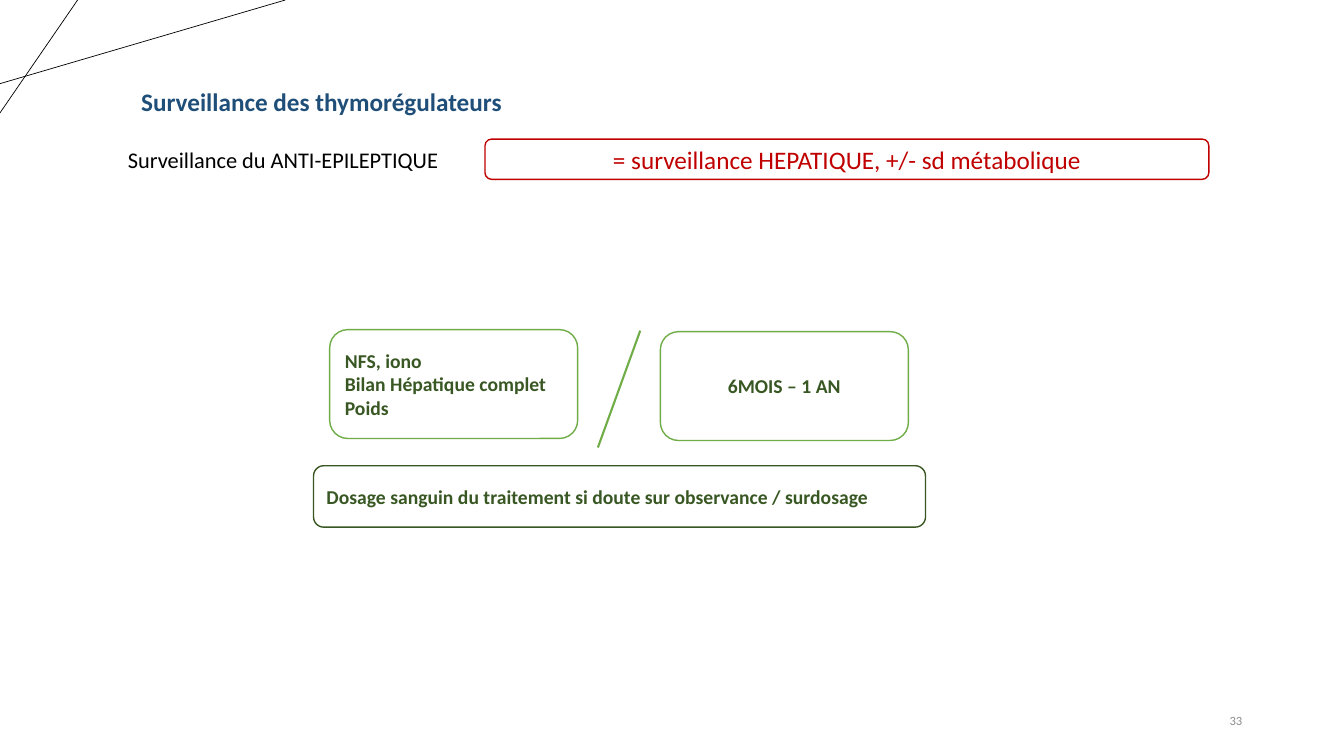
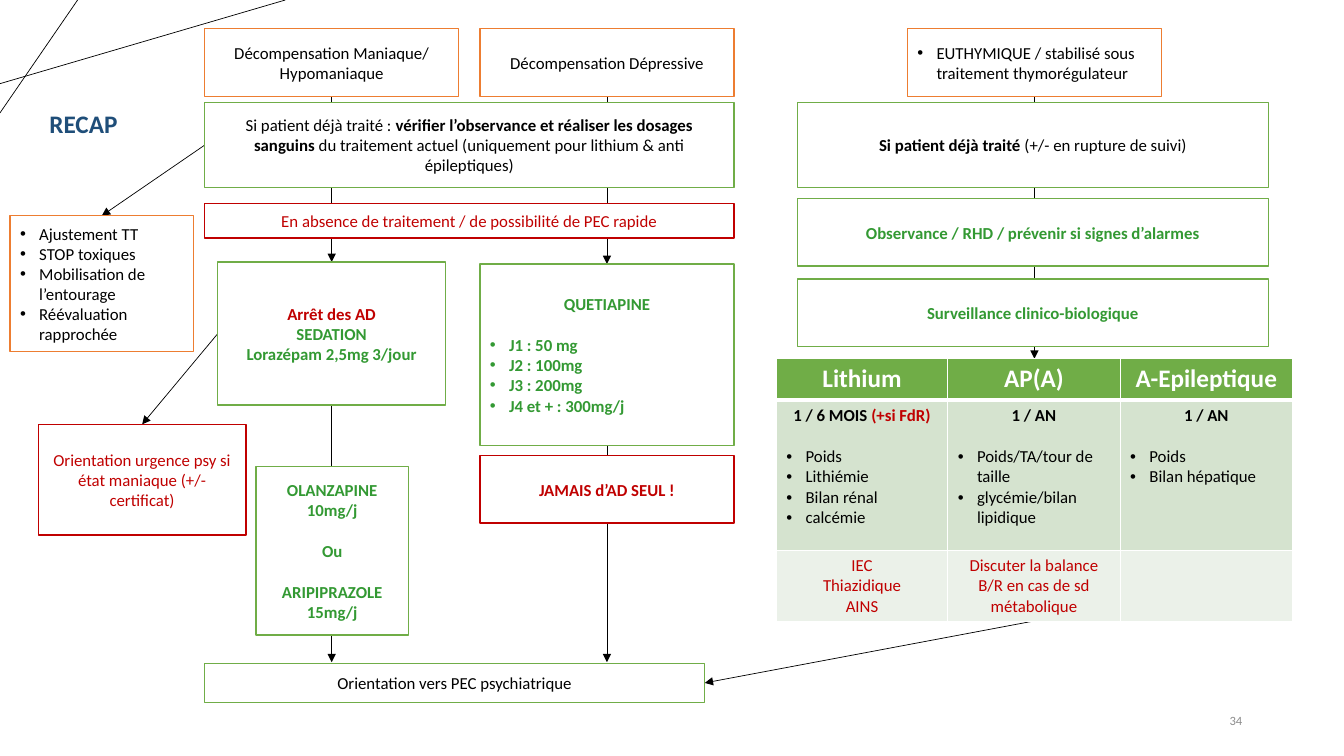
"""Build two slides on mood stabiliser monitoring: the anti-epileptic follow-up and the recap flowchart."""
import pptx
import pptx.dml.color
import pptx.enum.shapes
import pptx.enum.text
import pptx.oxml
import pptx.oxml.ns
import pptx.util

PX = 9144
FONT = "Calibri"
LINE_GAP = 14.6
COLORS = {
    "black": "000000",
    "white": "FFFFFF",
    "navy": "1F4E79",
    "red": "C00000",
    "orange": "ED7D31",
    "green": "70AD47",
    "leaf": "339933",
    "forest": "385723",
    "gray": "8C8C8C",
    "band": "D5E3CF",
    "pale": "EBF1E9",
}
RGB = {name: pptx.dml.color.RGBColor.from_string(value) for name, value in COLORS.items()}
ALIGN = {
    "left": pptx.enum.text.PP_ALIGN.LEFT,
    "center": pptx.enum.text.PP_ALIGN.CENTER,
    "right": pptx.enum.text.PP_ALIGN.RIGHT,
    "bullet": pptx.enum.text.PP_ALIGN.LEFT,
}
ANCHOR = pptx.enum.text.MSO_ANCHOR
SHAPE = pptx.enum.shapes.MSO_SHAPE
NAMESPACE = pptx.oxml.ns.nsdecls("a")


def write(frame, paragraphs, size, anchor):
    """Fill a text frame with (kind, space before, runs) paragraphs."""
    frame.word_wrap = True
    frame.vertical_anchor = anchor
    for index, (kind, gap, runs) in enumerate(paragraphs):
        para = frame.add_paragraph() if index else frame.paragraphs[0]
        if kind == "bullet":
            properties = para._p.get_or_add_pPr()
            properties.set("marL", str(19 * PX))
            properties.set("indent", str(-19 * PX))
            for tag in ('buFont {} typeface="Arial"', 'buChar {} char="•"'):
                properties.append(pptx.oxml.parse_xml(f"<a:{tag.format(NAMESPACE)}/>"))
        para.alignment = ALIGN[kind]
        para.space_before = pptx.util.Pt(gap)
        for text, color, bold in runs:
            span = para.add_run()
            span.text = text
            span.font.name = FONT
            span.font.size = pptx.util.Pt(size)
            span.font.bold = bold
            span.font.color.rgb = RGB[color]


def draw_line(page, start, end, color, width):
    """Draw a straight line without a shadow."""
    points = [value * PX for value in (*start, *end)]
    line = page.shapes.add_connector(pptx.enum.shapes.MSO_CONNECTOR.STRAIGHT, *points)
    line.line.color.rgb = RGB[color]
    line.line.width = pptx.util.Pt(width)
    line.element.spPr.append(pptx.oxml.parse_xml(f"<a:effectLst {NAMESPACE}/>"))
    return line


deck = pptx.Presentation()
deck.slide_width = 1333 * PX
deck.slide_height = 750 * PX
layout = deck.slide_layouts[5]

monitoring_boxes = {
    "liver": (481, 138, 718, 40, "red", 18, [
        ("center", 0, [("= surveillance HEPATIQUE, +/- sd métabolique", "red", False)]),
    ]),
    "tests": (327, 327, 246, 108, "green", 14, [
        ("left", 0, [(text, "forest", True)])
        for text in ("NFS, iono", "Bilan Hépatique complet", "Poids")
    ]),
    "dosage": (311, 462, 607, 61, "forest", 14, [
        ("left", 0, [("Dosage sanguin du traitement si doute sur observance / surdosage", "forest", True)]),
    ]),
    "interval": (655, 329, 246, 108, "green", 14, [
        ("center", 0, [("6MOIS – 1 AN", "forest", True)]),
    ]),
}

recap_boxes = {
    "manic": (203, 28, 252, 68, "orange", 12, [
        ("center", 0, [("Décompensation Maniaque/ Hypomaniaque", "black", False)]),
    ]),
    "depressive": (476, 28, 252, 68, "orange", 12, [
        ("center", 0, [("Décompensation Dépressive", "black", False)]),
    ]),
    "euthymic": (900, 28, 252, 68, "orange", 12, [
        ("bullet", 0, [("EUTHYMIQUE / stabilisé sous traitement thymorégulateur", "black", False)]),
    ]),
    "adherence": (203, 102, 525, 84, "green", 12, [
        ("center", 0, [
            ("Si patient déjà traité : ", "black", False),
            ("vérifier l’observance et réaliser les dosages sanguins ", "black", True),
            ("du traitement actuel (uniquement pour lithium & anti épileptiques)", "black", False),
        ]),
    ]),
    "untreated": (203, 202, 525, 34, "red", 12, [
        ("center", 0, [("En absence de traitement / de possibilité de PEC rapide", "red", False)]),
    ]),
    "adjust": (10, 214, 182, 135, "orange", 12, [
        ("bullet", 0, [(text, "black", False)])
        for text in ("Ajustement TT", "STOP toxiques", "Mobilisation de l’entourage", "Réévaluation rapprochée")
    ]),
    "sedation": (216, 260, 226, 142, "green", 12, [
        ("center", 0, [("Arrêt des AD", "red", True)]),
        ("center", 0, [("SEDATION", "leaf", True)]),
        ("center", 0, [("Lorazépam 2,5mg 3/jour", "leaf", True)]),
    ]),
    "quetiapine": (476, 262, 252, 180, "green", 12, [
        ("center", 0, [("QUETIAPINE", "leaf", True)]),
        *[
            ("bullet", 0 if index else LINE_GAP, [(text, "leaf", True)])
            for index, text in enumerate(("J1 : 50 mg", "J2 : 100mg", "J3 : 200mg", "J4 et + : 300mg/j"))
        ],
    ]),
    "emergency": (38, 421, 206, 110, "red", 12, [
        ("center", 0, [("Orientation urgence psy si état maniaque (+/- certificat)", "red", False)]),
    ]),
    "antipsychotic": (254, 463, 151, 167, "green", 12, [
        ("center", gap, [(text, "leaf", True)])
        for text, gap in (
            ("OLANZAPINE", 0), ("10mg/j", 0), ("Ou", LINE_GAP), ("ARIPIPRAZOLE", LINE_GAP), ("15mg/j", 0),
        )
    ]),
    "never": (476, 452, 252, 67, "red", 12, [
        ("center", 0, [("JAMAIS d’AD SEUL !", "red", True)]),
    ]),
    "referral": (203, 658, 496, 39, "green", 12, [
        ("center", 0, [("Orientation vers PEC psychiatrique", "black", False)]),
    ]),
    "treated": (791, 102, 467, 84, "green", 12, [
        ("center", 0, [
            ("Si patient déjà traité ", "black", True),
            ("(+/- en rupture de suivi)", "black", False),
        ]),
    ]),
    "hygiene": (791, 197, 467, 67, "green", 12, [
        ("center", 0, [("Observance / RHD / prévenir si signes d’alarmes", "leaf", True)]),
    ]),
    "follow_up": (791, 277, 467, 67, "green", 12, [
        ("center", 0, [("Surveillance clinico-biologique", "leaf", True)]),
    ]),
}

pages = []
shapes = {}
for number, heading, heading_area, outline, boxes in (
    (33, "Surveillance des thymorégulateurs", (130, 81, 797, 40), SHAPE.ROUNDED_RECTANGLE, monitoring_boxes),
    (34, "RECAP", (39, 102, 114, 40), SHAPE.RECTANGLE, recap_boxes),
):
    page = deck.slides.add_slide(layout)
    pages.append(page)
    title = page.shapes.title
    title.left, title.top, title.width, title.height = [value * PX for value in heading_area]
    title.text_frame.auto_size = pptx.enum.text.MSO_AUTO_SIZE.NONE
    write(title.text_frame, [("left", 0, [(heading, "navy", True)])], 18, ANCHOR.TOP)

    page_number = page.shapes.add_textbox(*[value * PX for value in (942, 695, 300, 40)])
    write(page_number.text_frame, [("right", 0, [(str(number), "gray", False)])], 9, ANCHOR.MIDDLE)

    for name, (left, top, width, height, border, size, paragraphs) in boxes.items():
        box = page.shapes.add_shape(outline, left * PX, top * PX, width * PX, height * PX)
        box.shadow.inherit = False
        box.fill.solid()
        box.fill.fore_color.rgb = RGB["white"]
        box.line.color.rgb = RGB[border]
        box.line.width = pptx.util.Pt(1)
        write(box.text_frame, paragraphs, size, ANCHOR.MIDDLE)
        shapes[name] = box

monitoring, recap = pages

for index, (start, end) in enumerate((((0, 83), (283, 0)), ((77, 0), (0, 112)))):
    corner_line = draw_line(monitoring, start, end, "black", 0.5)
    corner_line.element.nvCxnSpPr.cNvPr.set("id", str(101 + index))
    layout.shapes.element.append(corner_line.element)

label = monitoring.shapes.add_textbox(*[value * PX for value in (117, 140, 355, 37)])
write(label.text_frame, [("left", 0, [("Surveillance du ANTI-EPILEPTIQUE", "black", False)])], 16, ANCHOR.TOP)
draw_line(monitoring, (635, 328), (593, 444), "green", 1.5)

for start, end, begin_join, end_join in (
    ((1026, 96), (1026, 356), ("euthymic", 2), None),
    ((216, 331), (141, 421), ("sedation", 1), ("emergency", 0)),
    ((329, 402), (329, 657), ("sedation", 2), None),
    ((602, 96), (602, 262), ("depressive", 2), ("quetiapine", 0)),
    ((329, 96), (329, 260), ("manic", 2), ("sedation", 0)),
    ((203, 144), (101, 214), ("adherence", 1), ("adjust", 0)),
    ((602, 442), (602, 657), ("quetiapine", 2), None),
    ((1026, 616), (699, 678), None, ("referral", 3)),
):
    arrow = draw_line(recap, start, end, "black", 0.5)
    if begin_join:
        arrow.begin_connect(shapes[begin_join[0]], begin_join[1])
    if end_join:
        arrow.end_connect(shapes[end_join[0]], end_join[1])
    arrow.line._get_or_add_ln().append(pptx.oxml.parse_xml(f'<a:tailEnd {NAMESPACE} type="triangle"/>'))
    recap.shapes.element.insert(2, arrow.element)

check_columns = (
    ([("1 / 6 MOIS ", "black", True), ("(+si FdR)", "red", True)],
     ("Poids", "Lithiémie", "Bilan rénal", "calcémie")),
    ([("1 / AN", "black", True)], ("Poids/TA/tour de taille", "glycémie/bilan lipidique")),
    ([("1 / AN", "black", True)], ("Poids", "Bilan hépatique")),
)
table_rows = (
    (41, "green", 18, [
        [("center", 0, [(text, "white", True)])] for text in ("Lithium", "AP(A)", "A-Epileptique")
    ]),
    (149, "band", 12, [
        [("center", 0, interval)] + [
            ("bullet", 0 if index else LINE_GAP, [(text, "black", False)]) for index, text in enumerate(checks)
        ]
        for interval, checks in check_columns
    ]),
    (71, "pale", 12, [
        [("center", 0, [(text, "red", False)]) for text in warnings]
        for warnings in (
            ("IEC", "Thiazidique", "AINS"),
            ("Discuter la balance B/R en cas de sd métabolique",),
            (),
        )
    ]),
)
table = recap.shapes.add_table(3, 3, *[value * PX for value in (770, 356, 512, 261)]).table
for column, width in zip(table.columns, (170, 171, 171)):
    column.width = width * PX
for row_index, (height, fill, size, cells) in enumerate(table_rows):
    table.rows[row_index].height = height * PX
    for column_index, paragraphs in enumerate(cells):
        cell = table.cell(row_index, column_index)
        write(cell.text_frame, paragraphs, size, ANCHOR.TOP)
        properties = cell._tc.get_or_add_tcPr()
        for side in "LRTB":
            thick = (row_index, side) in ((0, "B"), (1, "T"))
            properties.append(pptx.oxml.parse_xml(
                f'<a:ln{side} {NAMESPACE} w="{pptx.util.Pt(3 if thick else 1)}"><a:solidFill>'
                f'<a:srgbClr val="{COLORS["white"]}"/></a:solidFill></a:ln{side}>'
            ))
        cell.fill.solid()
        cell.fill.fore_color.rgb = RGB[fill]

deck.save("out.pptx")
